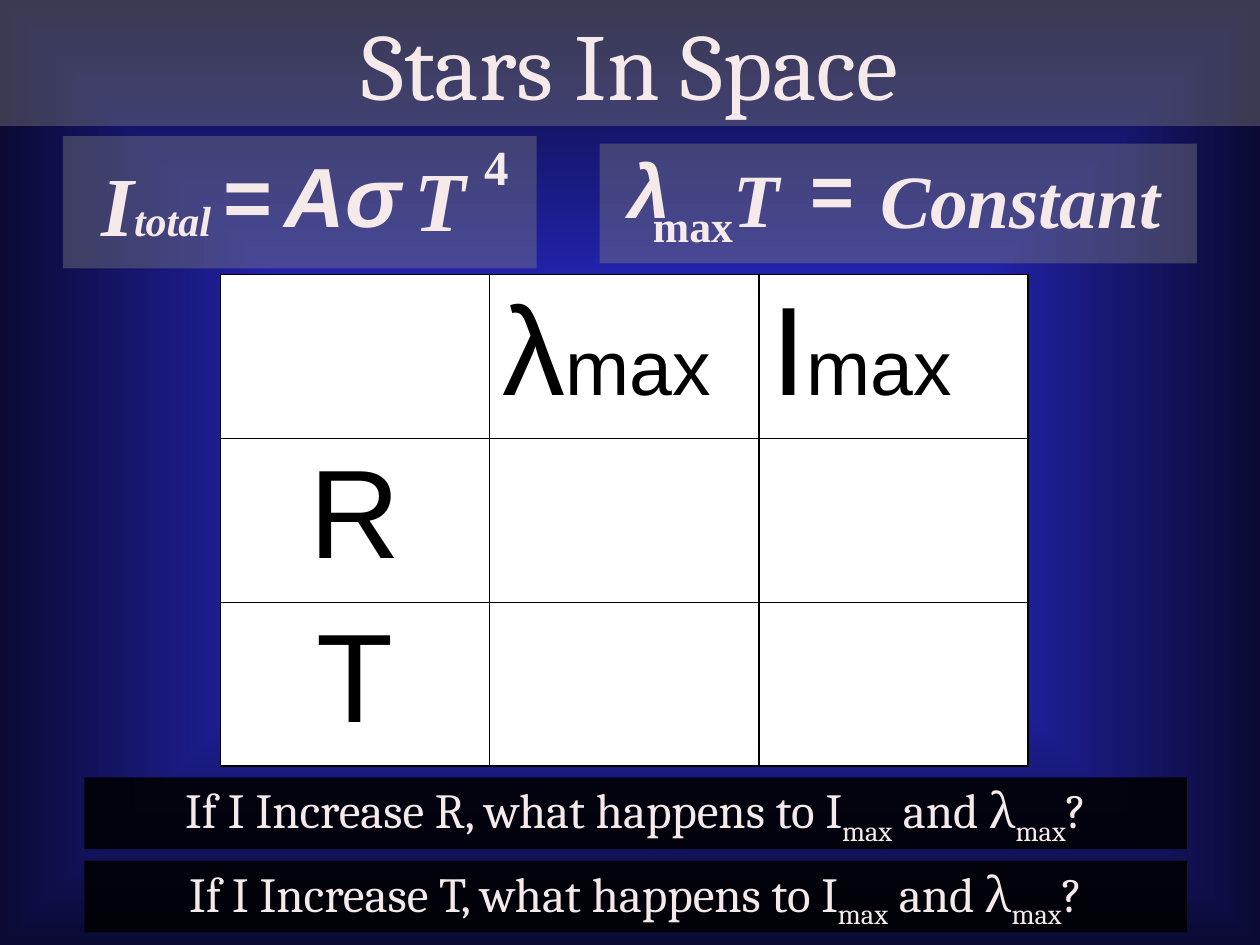
from lxml.etree import SubElement
from pptx import Presentation
from pptx.dml.color import RGBColor
from pptx.enum.shapes import MSO_SHAPE
from pptx.enum.text import MSO_ANCHOR, PP_ALIGN
from pptx.oxml import parse_xml
from pptx.oxml.ns import nsdecls, qn
from pptx.util import Inches, Pt

COLS, ROWS = 100, 75
INK = {"text": "F5E9E9", "panel": "808080", "black": "000000",
       "white": "FFFFFF", "glow": "3333FF", "night": "0A0A34"}
HEAD, MATH, SANS = "Cambria", "Times New Roman", "Arial"


class Deck:
    """Holds the style and the current slide; lengths are grid units."""

    def __init__(self):
        self.prs = Presentation()
        self.prs.slide_width, self.prs.slide_height = Inches(10), Inches(7.5)
        self.slide = self.prs.slides.add_slide(self.prs.slide_layouts[5])
        self.shapes = self.slide.shapes

    def box(self, x, y, w, h):
        dx, dy = self.prs.slide_width / COLS, self.prs.slide_height / ROWS
        return [round(v) for v in (x * dx, y * dy, w * dx, h * dy)]

    def back(self):
        page = self.slide._element.cSld
        page.insert(0, parse_xml(
            f'<p:bg {nsdecls("p", "a")}><p:bgPr><a:gradFill rotWithShape="1"><a:gsLst>'
            f'<a:gs pos="0"><a:srgbClr val="{INK["glow"]}"/></a:gs>'
            f'<a:gs pos="100000"><a:srgbClr val="{INK["night"]}"/></a:gs></a:gsLst>'
            '<a:path path="shape"><a:fillToRect l="50000" t="50000" r="50000" b="50000"/>'
            '</a:path></a:gradFill><a:effectLst/></p:bgPr></p:bg>'))

    def paint(self, shape, ink, alpha):
        shape.fill.solid()
        shape.fill.fore_color.rgb = RGBColor.from_string(INK[ink])
        tint = shape._element.spPr.find(qn("a:solidFill"))[0]
        SubElement(tint, qn("a:alpha"), val=str(alpha * 1000))

    def label(self, frame, runs, face, size, ink="text", align=PP_ALIGN.CENTER,
              bold=False, slant=False):
        """Each run is (text, size or None, baseline shift or None)."""
        para = frame.paragraphs[0]
        para.alignment = align
        font = para.font
        font.name, font.size, font.bold, font.italic = face, Pt(size), bold, slant
        font.color.rgb = RGBColor.from_string(INK[ink])
        for text, own, shift in runs:
            run = para.add_run()
            run.text = text
            if own:
                run.font.size = Pt(own)
            if shift:
                run.font._element.set("baseline", str(shift * 1000))

    def title(self, text, *area):
        shape = self.shapes.title
        shape.left, shape.top, shape.width, shape.height = self.box(*area)
        self.paint(shape, "panel", 41)
        shape.text_frame.vertical_anchor = MSO_ANCHOR.MIDDLE
        self.label(shape.text_frame, [(text, None, None)], HEAD, 54)

    def panel(self, ink, alpha, *area):
        shape = self.shapes.add_shape(MSO_SHAPE.RECTANGLE, *self.box(*area))
        shape.shadow.inherit = False
        shape.line.fill.background()
        self.paint(shape, ink, alpha)
        return shape

    def term(self, area, runs, face, size, slant=True, align=PP_ALIGN.CENTER):
        frame = self.shapes.add_textbox(*self.box(*area)).text_frame
        frame.margin_left = frame.margin_right = 0
        frame.margin_top = frame.margin_bottom = 0
        frame.word_wrap = align == PP_ALIGN.LEFT
        self.label(frame, runs, face, size, align=align, bold=True, slant=slant)

    def ask(self, y, cause):
        frame = self.panel("black", 86, 6.7, y, 87.5, 5.7).text_frame
        frame.word_wrap = True
        props = frame.paragraphs[0]._p.get_or_add_pPr()
        indent = Inches(0.38)
        props.set("marL", str(indent))
        props.set("indent", str(-indent))
        tabs = SubElement(props, qn("a:tabLst"))
        SubElement(tabs, qn("a:tab"), pos=str(indent), algn="l")
        sub = ("max", None, -25)
        self.label(frame, [(f"If I Increase {cause}, what happens to I", None, None), sub,
                           (" and λ", None, None), sub, ("?", None, None)], HEAD, 28)

    def table(self, area, rows):
        grid = self.shapes.add_table(len(rows), len(rows[0]), *self.box(*area)).table
        grid.first_row = grid.horz_banding = False
        for r, row in enumerate(rows):
            for c, runs in enumerate(row):
                cell = grid.cell(r, c)
                props = cell._tc.get_or_add_tcPr()
                for side in ("lnL", "lnR", "lnT", "lnB"):
                    line = SubElement(props, qn(f"a:{side}"), w=str(Pt(1)))
                    fill = SubElement(line, qn("a:solidFill"))
                    SubElement(fill, qn("a:srgbClr"), val=INK["black"])
                cell.fill.solid()
                cell.fill.fore_color.rgb = RGBColor.from_string(INK["white"])
                if runs:
                    align = PP_ALIGN.LEFT if c else PP_ALIGN.CENTER
                    self.label(cell.text_frame, runs, SANS, 72, "black", align)


def one(text):
    return [(text, None, None)]


def main():
    deck = Deck()
    deck.back()
    deck.title("Stars In Space", 0, 0, 100, 10)

    # Total intensity law
    deck.panel("panel", 41, 5, 10.8, 37.6, 10.5)
    deck.term((38.3, 10.8, 2.2, 4.7), one("4"), MATH, 28, slant=False)
    deck.term((32.6, 11.7, 4.7, 8), one("T"), MATH, 48)
    deck.term((8, 12.1, 8.8, 8.1), [("I", None, None), ("total", 24, None)], MATH, 48)
    deck.term((22.6, 11.4, 17.5, 8.1), one("Ασ"), SANS, 48, align=PP_ALIGN.LEFT)
    deck.term((17.6, 11.4, 4.2, 8), one("="), SANS, 48, slant=False)

    # Peak wavelength law
    deck.panel("panel", 41, 47.6, 11.4, 47.4, 9.5)
    deck.term((58.2, 12.1, 3.6, 7.2), one("T"), MATH, 43)
    deck.term((64.3, 11.4, 3.3, 7.2), one("="), SANS, 43, slant=False)
    deck.term((51.8, 15.8, 6.4, 4.2), one("max"), MATH, 25, slant=False)
    deck.term((49.9, 11.4, 3.3, 7.2), one("λ"), SANS, 43)
    deck.term((69.7, 12.2, 22.5, 7.2), one("Constant"), MATH, 43)

    # Table to fill in
    peak = ("max", 44, None)
    deck.table((17.5, 21.8, 64.1, 39), [
        [None, one("λ") + [peak], one("I") + [peak]],
        [one("R"), None, None],
        [one("T"), None, None]])

    # Questions
    for y, cause in ((61.7, "R"), (68.3, "T")):
        deck.ask(y, cause)
    deck.prs.save("out.pptx")


if __name__ == "__main__":
    main()
